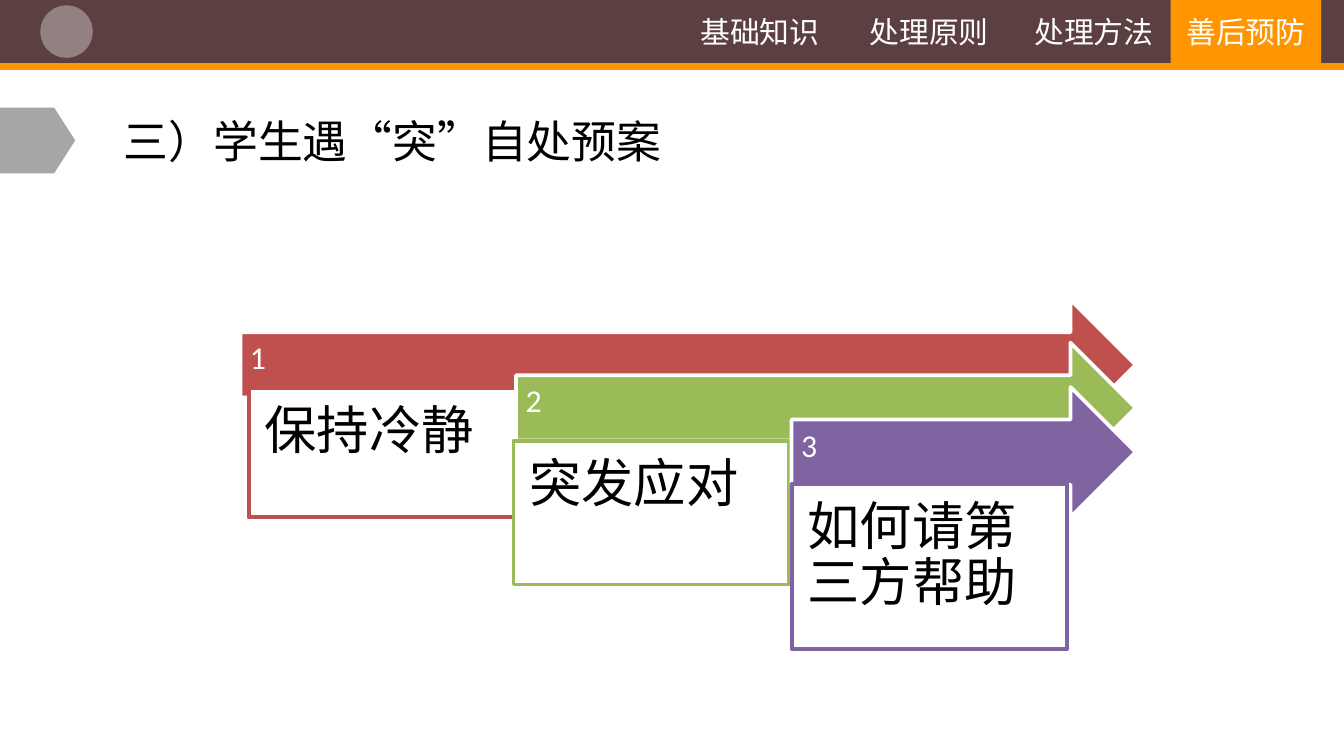
from lxml.etree import SubElement
from pptx import Presentation
from pptx.dml.color import RGBColor
from pptx.enum.shapes import MSO_SHAPE
from pptx.enum.text import MSO_ANCHOR, MSO_AUTO_SIZE, PP_ALIGN
from pptx.oxml.ns import qn
from pptx.util import Inches, Pt

CHINESE = "Noto Sans CJK SC"
LATIN = "Calibri"
WHITE, BLACK, ORANGE = "FFFFFF", "000000", "FF9500"
ARROW_RIGHT, ARROW_HEIGHT, CARD_WIDTH = 8.45, 0.97, 2.05

TABS = [
    ("基础知识", 5.03, 1.25, None),
    ("处理原则", 6.28, 1.27, None),
    ("处理方法", 7.55, 1.18, None),
    ("善后预防", 8.71, 1.12, ORANGE),
]
STEPS = [
    ("保持冷静", "C0504D", (1.79, 2.23), (1.85, 2.89), 0.96),
    ("突发应对", "9BBB59", (3.84, 2.55), (3.82, 3.28), 1.07),
    ("如何请第三方帮助", "8064A2", (5.89, 2.88), (5.89, 3.6), 1.23),
]


def color(value):
    return RGBColor.from_string(value)


def apply(target, values):
    for name, value in values.items():
        setattr(target, name, value)


def paint(shape, fill, line=None):
    if fill:
        shape.fill.solid()
        shape.fill.fore_color.rgb = color(fill)
    else:
        shape.fill.background()
    if line:
        shape.line.color.rgb = color(line)
        shape.line.width = Pt(2)
    else:
        shape.line.fill.background()


def add_box(shapes, kind, place, fill, line=None):
    box = shapes.add_shape(kind, *map(Inches, place))
    box.shadow.inherit = False
    paint(box, fill, line)
    return box


def write(box, text, size, font, ink, align=PP_ALIGN.LEFT,
          anchor=MSO_ANCHOR.MIDDLE, insets=(0.1, 0.05, 0.1, 0.05), spacing=1.0):
    left, top, right, bottom = map(Inches, insets)
    frame = box.text_frame
    apply(frame, {
        "word_wrap": True, "auto_size": MSO_AUTO_SIZE.NONE, "vertical_anchor": anchor,
        "margin_left": left, "margin_top": top,
        "margin_right": right, "margin_bottom": bottom,
    })
    para = frame.paragraphs[0]
    apply(para, {"alignment": align, "line_spacing": spacing})
    span = para.add_run()
    span.text = text
    apply(span.font, {"size": Pt(size), "name": font})
    span.font.color.rgb = color(ink)
    SubElement(span.font._element, qn("a:ea"), typeface=font)


def add_title(page, text):
    title = page.shapes.title
    apply(title, {
        "left": Inches(0.82), "top": Inches(0.69),
        "width": Inches(5.43), "height": Inches(0.71),
    })
    paint(title, WHITE)
    write(title, text, 24, CHINESE, BLACK)


def add_step(shapes, number, step):
    text, accent, (left, top), card_corner, card_height = step
    arrow = add_box(shapes, MSO_SHAPE.RIGHT_ARROW,
                    (left, top, ARROW_RIGHT - left, ARROW_HEIGHT), accent, WHITE)
    write(arrow, str(number), 17, LATIN, WHITE,
          insets=(0.07, 0.07, 0.28, 0.15), spacing=0.9)
    card = add_box(shapes, MSO_SHAPE.RECTANGLE,
                   (*card_corner, CARD_WIDTH, card_height), WHITE, accent)
    write(card, text, 28, CHINESE, BLACK, anchor=MSO_ANCHOR.TOP,
          insets=(0.12,) * 4, spacing=0.9)


def add_tab(page, text, left, width, fill):
    tab = add_box(page.shapes, MSO_SHAPE.RECTANGLE, (left, 0, width, 0.47), fill)
    write(tab, text, 16, CHINESE, WHITE, align=PP_ALIGN.CENTER)


def add_header(page):
    add_box(page.shapes, MSO_SHAPE.RECTANGLE, (0, 0, 10, 0.47), "5C3F41")
    add_box(page.shapes, MSO_SHAPE.RECTANGLE, (0, 0.47, 10, 0.05), ORANGE)
    for tab in TABS:
        add_tab(page, *tab)
    disc = add_box(page.shapes, MSO_SHAPE.OVAL, (0.3, 0.04, 0.39, 0.39), WHITE)
    tint = disc.fill._xPr.find(qn("a:solidFill"))[0]
    SubElement(tint, qn("a:alpha"), val="34000")


def main():
    deck = Presentation()
    width = Inches(10)
    apply(deck, {"slide_width": width, "slide_height": width * 9 // 16})
    page = deck.slides.add_slide(deck.slide_layouts[5])
    add_title(page, "三）学生遇“突”自处预案")
    steps = page.shapes.add_group_shape()
    for number, step in enumerate(STEPS, 1):
        add_step(steps.shapes, number, step)
    add_header(page)
    marker = add_box(page.shapes, MSO_SHAPE.PENTAGON, (0, 0.8, 0.56, 0.49), "A6A6A6")
    marker.adjustments[0] = 0.32
    deck.save("out.pptx")


if __name__ == "__main__":
    main()
